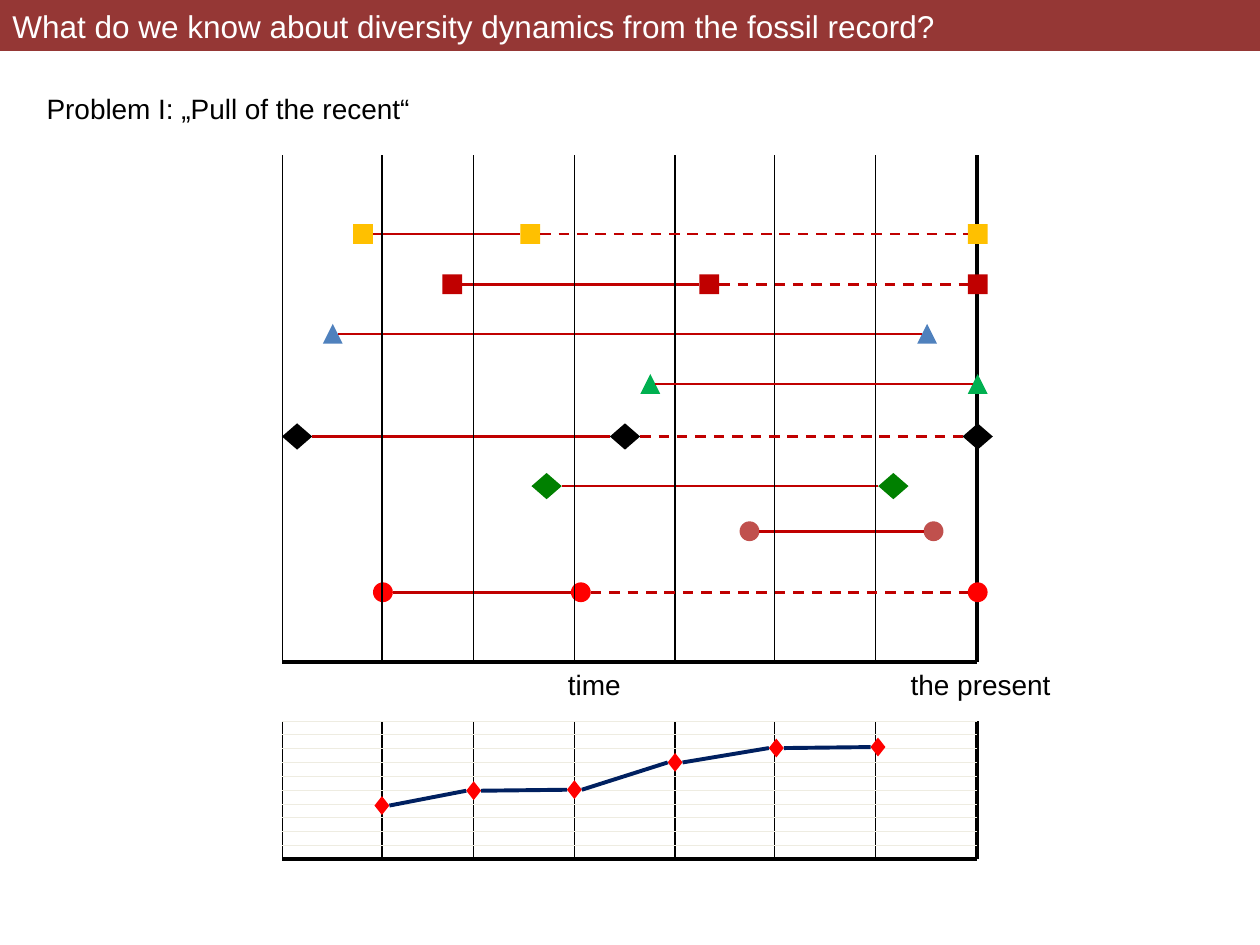
import pptx
import pptx.util
import pptx.dml.color
import pptx.enum.dml
import pptx.enum.shapes
import pptx.enum.text
import pptx.oxml.ns
import lxml.etree

Cm, Pt = pptx.util.Cm, pptx.util.Pt
Kind = pptx.enum.shapes.MSO_SHAPE

COLOURS = {
    "banner": "953735", "white": "FFFFFF", "black": "000000", "range": "C00000",
    "yellow": "FFC000", "crimson": "C00000", "blue": "4F81BD", "emerald": "00B050",
    "green": "008000", "brown": "C0504D", "red": "FF0000",
    "curve": "002060", "grid": "EEECE1",
}
TITLE = "What do we know about diversity dynamics from the fossil record?"
LABELS = [  # text, left, top, width
    ("Problem I: „Pull of the recent“", 0.69, 1.73, 7.92),
    ("time", 11.2, 13.34, 1.6),
    ("the present", 18.11, 13.34, 3.38),
]
# kind, colour, height on the slide, fossil finds, range up to the present
TAXA = [
    ("square", "yellow", 4.72, (7.32, 10.69), "dashed"),
    ("square", "crimson", 5.73, (9.12, 14.3), "dashed"),
    ("triangle", "blue", 6.73, (6.71, 18.69), None),
    ("triangle", "emerald", 7.74, (13.11,), "solid"),
    ("diamond", "black", 8.8, (5.99, 12.6), "dashed"),
    ("diamond", "green", 9.8, (11.02, 18.01), None),
    ("circle", "brown", 10.71, (15.11, 18.82), None),
    ("circle", "red", 11.94, (7.72, 11.71), "dashed"),
]
# preset, width, height, distance from centre to range line
MARKERS = {
    "square": (Kind.RECTANGLE, 0.4, 0.4, 0.2),
    "triangle": (Kind.ISOSCELES_TRIANGLE, 0.4, 0.4, 0.1),
    "diamond": (Kind.DIAMOND, 0.61, 0.53, 0.3),
    "circle": (Kind.OVAL, 0.4, 0.4, 0.2),
    "point": (Kind.DIAMOND, 0.3, 0.38, 0.15),
}
JOINABLE = ("square", "diamond", "point")
LEFT_SITE, RIGHT_SITE = 1, 3
TIME_LINES = [5.69, 7.7, 9.55, 11.58, 13.61, 15.62, 17.65, 19.69]
PRESENT = 19.71
RANGES_TOP, RANGES_BOTTOM = 3.12, 13.34
CURVE_TOP, CURVE_BOTTOM, CURVE_STEPS = 14.53, 17.32, 10
DIVERSITY = [(7.7, 16.24), (9.55, 15.94), (11.58, 15.92),
             (13.61, 15.37), (15.65, 15.08), (17.7, 15.06)]


def rgb(name):
    return pptx.dml.color.RGBColor.from_string(COLOURS[name])


def add_filled(shapes, preset, left, top, width, height, colour):
    shape = shapes.add_shape(preset, Cm(left), Cm(top), Cm(width), Cm(height))
    shape.shadow.inherit = False
    shape.fill.solid()
    shape.fill.fore_color.rgb = rgb(colour)
    shape.line.fill.background()
    return shape


def add_marker(shapes, kind, x, y, colour):
    preset, width, height, _ = MARKERS[kind]
    return add_filled(shapes, preset, x - width / 2, y - height / 2, width, height, colour)


def add_line(shapes, x1, y1, x2, y2, colour, weight):
    line = shapes.add_connector(pptx.enum.shapes.MSO_CONNECTOR.STRAIGHT,
                                Cm(x1), Cm(y1), Cm(x2), Cm(y2))
    line.line.color.rgb = rgb(colour)
    line.line.width = Pt(weight)
    lxml.etree.SubElement(line._element.spPr, pptx.oxml.ns.qn("a:effectLst"))
    return line


def link(shapes, kind, start, end, colour, weight):
    """Draw a line between two (marker, x, y), joined where the marker allows it."""
    reach = MARKERS[kind][3]
    (first, x1, y1), (last, x2, y2) = start, end
    line = add_line(shapes, x1 + reach, y1, x2 - reach, y2, colour, weight)
    if kind in JOINABLE:
        line.begin_connect(first, RIGHT_SITE)
        line.end_connect(last, LEFT_SITE)
    return line


def add_frame(shapes, top, bottom):
    """Draw the time axis and its vertical lines, the present in bold."""
    add_line(shapes, TIME_LINES[0], bottom, TIME_LINES[-1], bottom, "black", 2.25)
    for x in TIME_LINES:
        add_line(shapes, x, bottom, x, top, "black", 2.25 if x == TIME_LINES[-1] else 0.75)


def write(shape, text, size, colour):
    paragraph = shape.text_frame.paragraphs[0]
    paragraph.text = text
    paragraph.alignment = pptx.enum.text.PP_ALIGN.LEFT
    font = paragraph.runs[0].font
    font.name, font.size, font.color.rgb = "Arial", Pt(size), rgb(colour)


def add_ranges(shapes):
    last_finds = []
    for kind, colour, y, finds, _ in TAXA:
        marks = [(add_marker(shapes, kind, x, y, colour), x, y) for x in finds]
        for start, end in zip(marks, marks[1:]):
            link(shapes, kind, start, end, "range", 1.5)
        last_finds.append(marks[-1])
    add_frame(shapes, RANGES_TOP, RANGES_BOTTOM)
    for (kind, colour, y, _, survival), last_find in zip(TAXA, last_finds):
        if survival:
            living = add_marker(shapes, kind, PRESENT, y, colour)
            line = link(shapes, kind, last_find, (living, PRESENT, y), "range", 1.5)
            if survival == "dashed":
                line.line.dash_style = pptx.enum.dml.MSO_LINE.DASH


def add_diversity(shapes):
    add_frame(shapes, CURVE_TOP, CURVE_BOTTOM)
    step = (CURVE_BOTTOM - CURVE_TOP) / CURVE_STEPS
    for row in range(CURVE_STEPS):
        y = CURVE_TOP + row * step
        add_line(shapes, TIME_LINES[0], y, TIME_LINES[-1], y, "grid", 0.25)
    points = [(add_marker(shapes, "point", x, y, "red"), x, y) for x, y in DIVERSITY]
    for start, end in zip(points, points[1:]):
        link(shapes, "point", start, end, "curve", 2.25)


def main():
    deck = pptx.Presentation()
    deck.slide_width, deck.slide_height = Cm(25.4), Cm(19.05)
    shapes = deck.slides.add_slide(deck.slide_layouts[6]).shapes
    add_ranges(shapes)
    add_diversity(shapes.add_group_shape().shapes)
    for text, left, top, width in LABELS:
        label = shapes.add_textbox(Cm(left), Cm(top), Cm(width), Cm(0.94))
        label.text_frame.word_wrap = False
        label.text_frame.auto_size = pptx.enum.text.MSO_AUTO_SIZE.SHAPE_TO_FIT_TEXT
        write(label, text, 16, "black")
    banner = add_filled(shapes, Kind.RECTANGLE, 0, 0, 25.4, 1.03, "banner")
    banner.text_frame.word_wrap = True
    banner.text_frame.auto_size = pptx.enum.text.MSO_AUTO_SIZE.SHAPE_TO_FIT_TEXT
    write(banner, TITLE, 18, "white")
    deck.save("out.pptx")


if __name__ == "__main__":
    main()
